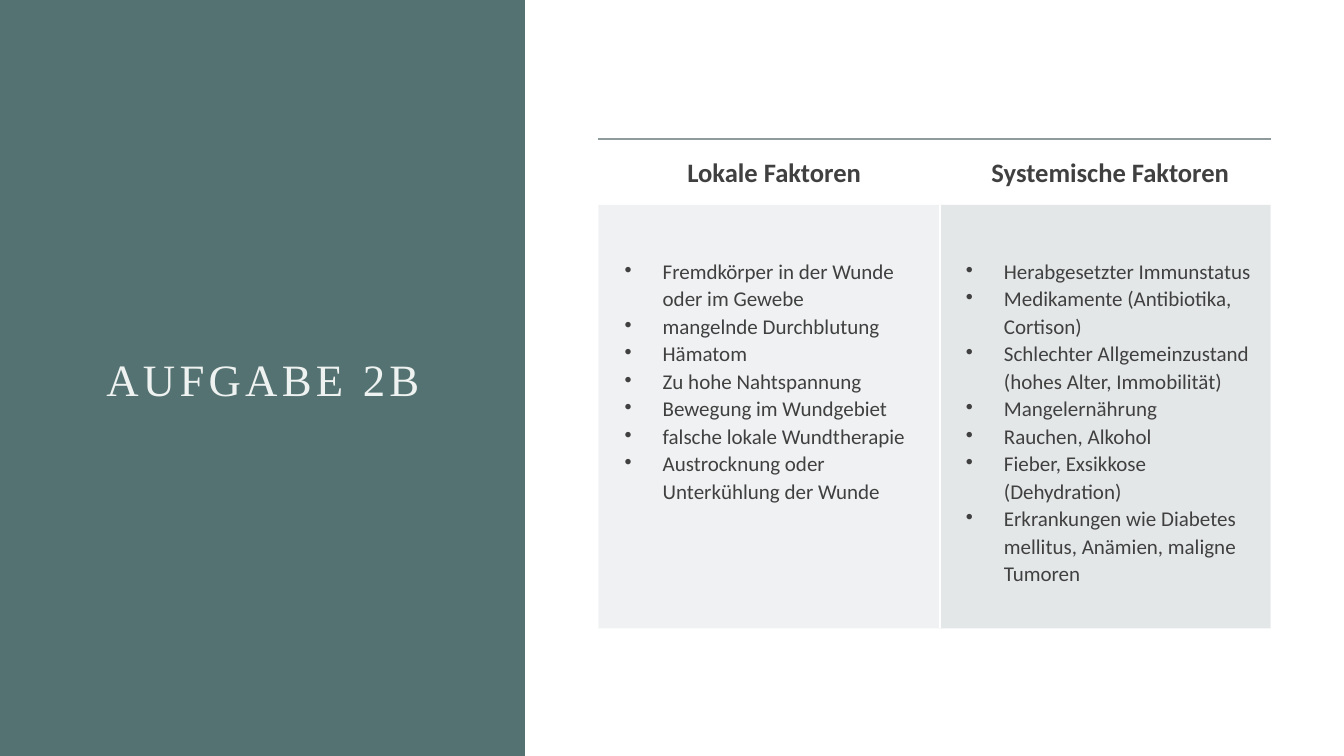
from dataclasses import dataclass

from lxml.etree import SubElement
from pptx import Presentation
from pptx.dml.color import RGBColor
from pptx.enum.shapes import MSO_SHAPE as Shape
from pptx.enum.text import MSO_ANCHOR as Anchor, PP_ALIGN as Align
from pptx.oxml import parse_xml
from pptx.oxml.ns import nsdecls, qn
from pptx.util import Cm, Pt

NO_STYLE = "{2D5ABB26-0587-4C30-8999-92F81FD0307C}"
TEXT = "404040"
SHADE = "B4BCBE"
BULLET_INDENT = Cm(0.96)


@dataclass
class FactorColumn:
    heading: str
    factors: list[str]
    width: float
    opacity: int
    inner_side: str


COLUMNS = [
    FactorColumn("Lokale Faktoren", [
        "Fremdkörper in der Wunde oder im Gewebe",
        "mangelnde Durchblutung",
        "Hämatom",
        "Zu hohe Nahtspannung",
        "Bewegung im Wundgebiet",
        "falsche lokale Wundtherapie",
        "Austrocknung oder Unterkühlung der Wunde",
    ], 8.6, 20, "R"),
    FactorColumn("Systemische Faktoren", [
        "Herabgesetzter Immunstatus",
        "Medikamente (Antibiotika, Cortison)",
        "Schlechter Allgemeinzustand (hohes Alter, Immobilität)",
        "Mangelernährung",
        "Rauchen, Alkohol",
        "Fieber, Exsikkose (Dehydration)",
        "Erkrankungen wie Diabetes mellitus, Anämien, maligne Tumoren",
    ], 8.34, 35, "L"),
]


def rgb(color: str) -> RGBColor:
    return RGBColor.from_string(color)


def style(paragraph, font: str, size: float, color: str, spacing: float, bold: bool = False) -> None:
    paragraph.line_spacing = spacing
    paragraph.font.name = font
    paragraph.font.size = Pt(size)
    paragraph.font.bold = bold
    paragraph.font.color.rgb = rgb(color)


def add_bullet(paragraph) -> None:
    properties = paragraph._p.get_or_add_pPr()
    properties.set("marL", str(BULLET_INDENT))
    properties.set("indent", str(-BULLET_INDENT))
    bullet = parse_xml(f'<a:buChar {nsdecls("a")} char="•"/>')
    properties.insert_element_before(bullet, "a:tabLst", "a:defRPr", "a:extLst")


def set_border(cell, side: str, color: str, opacity: int = 100) -> None:
    border = parse_xml(
        f'<a:ln{side} {nsdecls("a")} w="{Pt(1.5)}"><a:solidFill><a:srgbClr val="{color}">'
        f'<a:alpha val="{opacity * 1000}"/></a:srgbClr></a:solidFill></a:ln{side}>')
    cell._tc.get_or_add_tcPr().insert(0, border)


def set_margins(cell, top: float, other: float) -> None:
    cell.margin_left = Cm(0.66)
    cell.margin_top = Cm(top)
    cell.margin_right = cell.margin_bottom = Cm(other)


def fill_heading(cell, column: FactorColumn) -> None:
    set_margins(cell, 0.4, 0.4)
    cell.fill.background()
    set_border(cell, "T", "8F9A9D", 60)
    heading = cell.text_frame.paragraphs[0]
    heading.text = column.heading
    heading.alignment = Align.CENTER
    style(heading, "Calibri", 19, TEXT, 1.07, bold=True)


def fill_factors(cell, column: FactorColumn) -> None:
    set_margins(cell, 1.33, 0.36)
    cell.fill.solid()
    cell.fill.fore_color.rgb = rgb(SHADE)
    shade = cell._tc.tcPr.find(f'{qn("a:solidFill")}/{qn("a:srgbClr")}')
    SubElement(shade, qn("a:alpha"), val=str(column.opacity * 1000))
    set_border(cell, column.inner_side, "FFFFFF")
    cell.text_frame.text = "\n".join(column.factors)
    for factor in cell.text_frame.paragraphs:
        style(factor, "Calibri", 15, TEXT, 1.07)
        add_bullet(factor)


def add_panel(slide) -> None:
    panel = slide.shapes.add_shape(Shape.RECTANGLE, 0, 0, Cm(13.23), Cm(19.05))
    panel.shadow.inherit = False
    panel.fill.solid()
    panel.fill.fore_color.rgb = rgb("557272")
    panel.line.fill.background()


def add_title(slide) -> None:
    frame = slide.shapes.add_textbox(Cm(2.39), Cm(1.9), Cm(8.48), Cm(8.46)).text_frame
    frame.word_wrap = True
    frame.vertical_anchor = Anchor.BOTTOM
    title = frame.paragraphs[0]
    title.text = "AUFGABE 2B"
    title.alignment = Align.CENTER
    style(title, "Times New Roman", 32, "EEF2F0", 0.9)
    title.runs[0].font._element.set("spc", "300")


def add_factor_table(slide) -> None:
    width = sum(column.width for column in COLUMNS)
    frame = slide.shapes.add_table(2, len(COLUMNS), Cm(15.08), Cm(3.5), Cm(width), Cm(12.33))
    table = frame.table
    table._tbl.tblPr.find(qn("a:tableStyleId")).text = NO_STYLE
    table.horz_banding = False
    for row, height in zip(table.rows, (1.66, 10.67)):
        row.height = Cm(height)
    for index, column in enumerate(COLUMNS):
        table.columns[index].width = Cm(column.width)
        fill_heading(table.cell(0, index), column)
        fill_factors(table.cell(1, index), column)


def main() -> None:
    presentation = Presentation()
    presentation.slide_width = Cm(33.87)
    presentation.slide_height = Cm(19.05)
    slide = presentation.slides.add_slide(presentation.slide_layouts[6])

    # Title side
    add_panel(slide)
    add_title(slide)

    # Factors side
    add_factor_table(slide)

    presentation.save("out.pptx")


if __name__ == "__main__":
    main()
